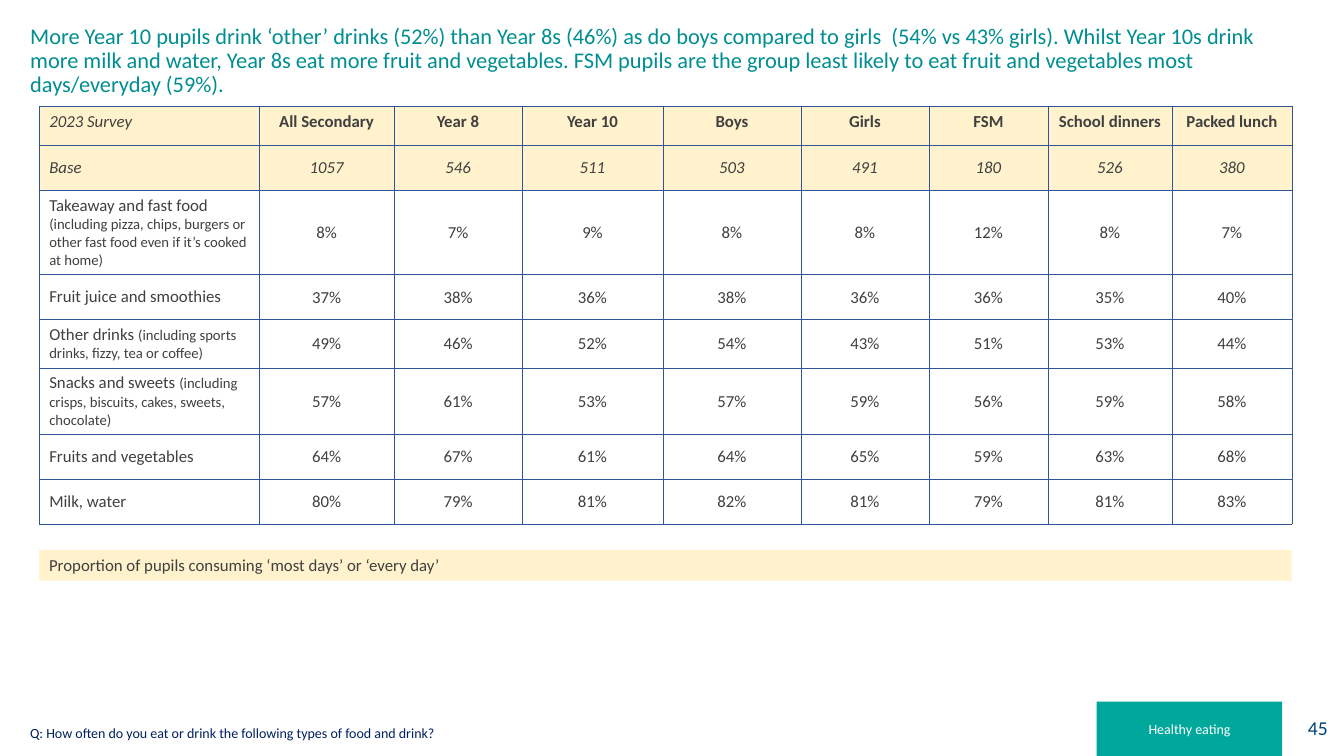
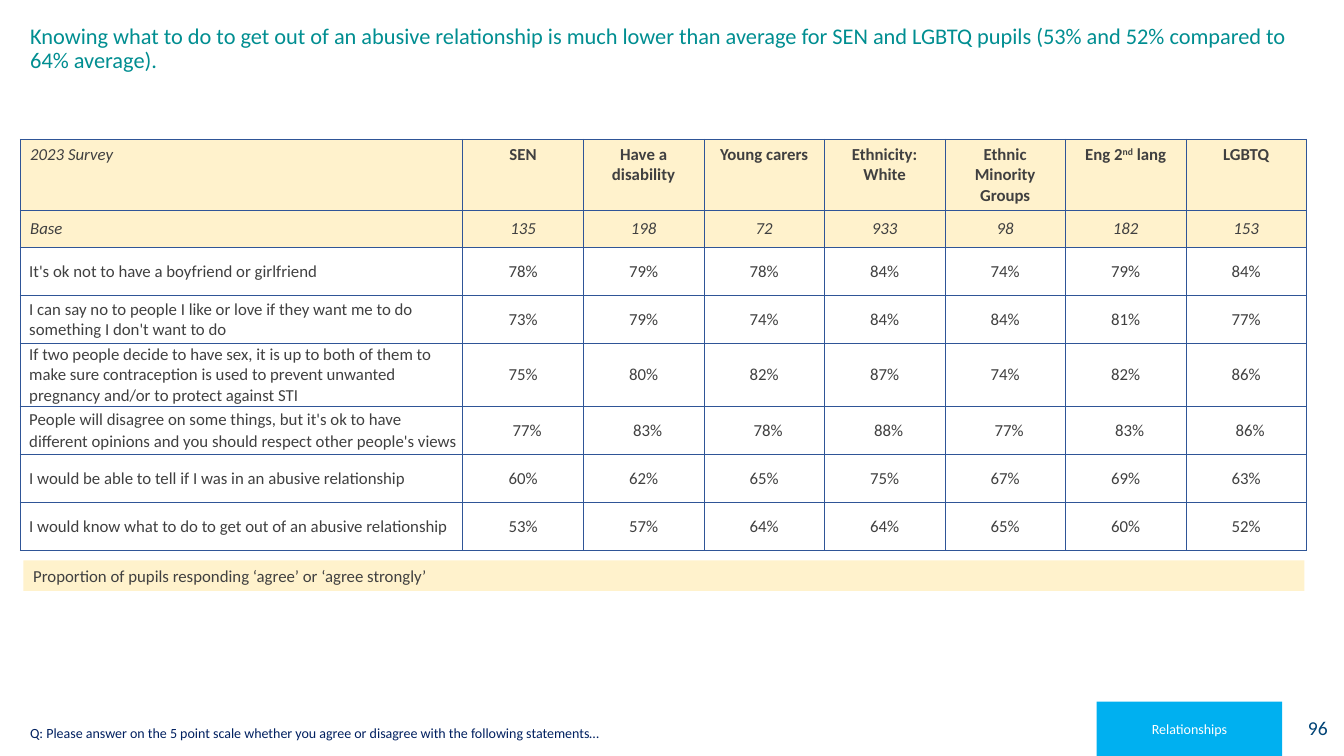
from lxml.etree import SubElement
from pptx import Presentation
from pptx.dml.color import RGBColor
from pptx.enum.shapes import MSO_SHAPE
from pptx.enum.text import MSO_ANCHOR, MSO_AUTO_SIZE, PP_ALIGN
from pptx.oxml.ns import qn
from pptx.util import Pt

COLORS = {
    "title": "008E91",
    "body": "404040",
    "question": "002060",
    "page": "004376",
    "border": "2F5597",
    "cream": "FFF2CC",
    "white": "FFFFFF",
    "healthy": "00A79B",
    "relationships": "00B0F0",
}
CENTER = {"alignment": PP_ALIGN.CENTER}
LEFT = {"alignment": PP_ALIGN.LEFT}
RIGHT = {"alignment": PP_ALIGN.RIGHT}
DETAIL = {"size": Pt(10.5)}
TIGHT = {"margin_left": Pt(0.7), "margin_right": Pt(0.7),
         "margin_top": Pt(0.7), "margin_bottom": Pt(0)}
INDENTED = {**TIGHT, "margin_left": Pt(6.5)}


def apply(target, formats):
    for name, value in formats.items():
        setattr(target, name, value)


class SurveyDeck:
    def __init__(self):
        self.deck = Presentation()
        apply(self.deck, {"slide_width": Pt(960), "slide_height": Pt(540)})
        self.slide = None

    def box(self, left, top, width, height):
        return Pt(left), Pt(top), Pt(width), Pt(height)

    def put_text(self, frame, content, color, size, paragraph_format=LEFT, **font_format):
        runs = [(content, {})] if isinstance(content, str) else content
        paragraph = frame.paragraphs[0]
        apply(paragraph, paragraph_format)
        for text, extra in runs:
            run = paragraph.add_run()
            run.text = text
            formats = {"name": "Calibri", "size": Pt(size), **font_format, **extra}
            baseline = formats.pop("baseline", None)
            apply(run.font, formats)
            run.font.color.rgb = RGBColor.from_string(COLORS[color])
            if baseline:
                run._r.get_or_add_rPr().set("baseline", baseline)

    def start(self, title, height):
        self.slide = self.deck.slides.add_slide(self.deck.slide_layouts[5])
        heading = self.slide.shapes.title
        left, top, width, height = self.box(14.4, 14.4, 919.4, height)
        apply(heading, {"left": left, "top": top, "width": width, "height": height})
        apply(heading.text_frame, {"word_wrap": True, "auto_size": MSO_AUTO_SIZE.NONE,
                                   "vertical_anchor": MSO_ANCHOR.TOP})
        self.put_text(heading.text_frame, title, "title", 16,
                      {**LEFT, "line_spacing": 0.9})

    def band(self, place, fill, text, color, size, paragraph_format=LEFT,
             anchor=MSO_ANCHOR.MIDDLE):
        band = self.slide.shapes.add_shape(MSO_SHAPE.RECTANGLE, *self.box(*place))
        band.shadow.inherit = False
        band.fill.solid()
        band.fill.fore_color.rgb = RGBColor.from_string(COLORS[fill])
        band.line.fill.background()
        apply(band.text_frame, {"word_wrap": True, "vertical_anchor": anchor})
        self.put_text(band.text_frame, text, color, size, paragraph_format)

    def note(self, left, top, width, text):
        self.band((left, top, width, 21.8), "cream", text, "body", 12,
                  anchor=MSO_ANCHOR.TOP)

    def footer(self, question, topic, topic_fill, page):
        asked = self.slide.shapes.add_textbox(*self.box(14.4, 513.4, 740, 19.4))
        apply(asked.text_frame, {"word_wrap": True, "vertical_anchor": MSO_ANCHOR.BOTTOM})
        self.put_text(asked.text_frame, question, "question", 10)
        self.band((913, 500.4, 42.5, 38.9), "white", page, "page", 14, RIGHT)
        self.band((783.4, 501.1, 132.5, 38.9), topic_fill, topic, "white", 10, CENTER)

    def borders(self, cell):
        properties = cell._tc.get_or_add_tcPr()
        for side in ("lnL", "lnR", "lnT", "lnB"):
            line = SubElement(properties, qn(f"a:{side}"), w=str(Pt(0.5)))
            fill = SubElement(line, qn("a:solidFill"))
            SubElement(fill, qn("a:srgbClr"), val=COLORS["border"])

    def survey(self, left, top, widths, heights, headers, bases, answers,
               label_margins, loose_row=None):
        rows = [["2023 Survey", *headers], ["Base", *bases]]
        rows += [[label, *(f"{share}%" for share in shares)] for label, shares in answers]
        frame = self.slide.shapes.add_table(
            len(rows), len(widths), *self.box(left, top, sum(widths), sum(heights)))
        table = frame.table
        apply(table, {"first_row": False, "horz_banding": False})
        for column, width in zip(table.columns, widths):
            column.width = Pt(width)
        for row, height in zip(table.rows, heights):
            row.height = Pt(height)
        for r, row in enumerate(rows):
            for c, content in enumerate(row):
                cell = table.cell(r, c)
                self.borders(cell)
                if r < 2:
                    cell.fill.solid()
                    cell.fill.fore_color.rgb = RGBColor.from_string(COLORS["cream"])
                else:
                    cell.fill.background()
                    value_margins = INDENTED if r == loose_row else TIGHT
                    apply(cell, value_margins if c else label_margins)
                cell.vertical_anchor = MSO_ANCHOR.MIDDLE if r else MSO_ANCHOR.TOP
                layout = dict(CENTER if c else LEFT)
                if r == loose_row:
                    layout["line_spacing"] = 1.07
                self.put_text(cell.text_frame, content, "body", 12, layout,
                              bold=r == 0 and c > 0,
                              italic=r == 1 or (r == 0 and c == 0))


def healthy_eating(survey):
    survey.start("More Year 10 pupils drink ‘other’ drinks (52%) than Year 8s (46%) as do boys "
                 "compared to girls  (54% vs 43% girls). Whilst Year 10s drink more milk and "
                 "water, Year 8s eat more fruit and vegetables. FSM pupils are the group least "
                 "likely to eat fruit and vegetables most days/everyday (59%).", 61.2)
    survey.survey(
        28, 75.8,
        [157.1, 96.4, 91.4, 100.7, 98.6, 91.4, 85, 88.6, 85.7],
        [28] + [32.2] * 7,
        ["All Secondary", "Year 8", "Year 10", "Boys", "Girls", "FSM",
         "School dinners", "Packed lunch"],
        ["1057", "546", "511", "503", "491", "180", "526", "380"],
        [
            ([("Takeaway and fast food ", {}),
              ("(including pizza, chips, burgers or other fast food even if it’s "
               "cooked at home)", DETAIL)], [8, 7, 9, 8, 8, 12, 8, 7]),
            ("Fruit juice and smoothies", [37, 38, 36, 38, 36, 36, 35, 40]),
            ([("Other drinks ", {}),
              ("(including sports drinks, fizzy, tea or coffee)", DETAIL)],
             [49, 46, 52, 54, 43, 51, 53, 44]),
            ([("Snacks and sweets ", {}),
              ("(including crisps, biscuits, cakes, sweets, chocolate)", DETAIL)],
             [57, 61, 53, 57, 59, 56, 59, 58]),
            ("Fruits and vegetables", [64, 67, 61, 64, 65, 59, 63, 68]),
            ("Milk, water", [80, 79, 81, 82, 81, 79, 81, 83]),
        ],
        {})
    survey.note(28, 392.9, 894.6, "Proportion of pupils consuming ‘most days’ or ‘every day’")
    survey.footer("Q: How often do you eat or drink the following types of food and drink?",
                  "Healthy eating", "healthy", "45")


def relationships(survey):
    survey.start("Knowing what to do to get out of an abusive relationship is much lower than "
                 "average for SEN and LGBTQ pupils (53% and 52% compared to 64% average).", 70.6)
    survey.survey(
        14.4, 99.4,
        [316.2] + [86.1] * 7,
        [33.8, 26.2] + [34.3] * 6,
        ["SEN", "Have a disability", "Young carers", "Ethnicity: White",
         "Ethnic Minority Groups",
         [("Eng 2", {}), ("nd", {"baseline": "30000"}), (" lang", {})], "LGBTQ"],
        ["135", "198", "72", "933", "98", "182", "153"],
        [
            ("It's ok not to have a boyfriend or girlfriend", [78, 79, 78, 84, 74, 79, 84]),
            ("I can say no to people I like or love if they want me to do something "
             "I don't want to do", [73, 79, 74, 84, 84, 81, 77]),
            ("If two people decide to have sex, it is up to both of them to make sure "
             "contraception is used to prevent unwanted pregnancy and/or to protect "
             "against STI", [75, 80, 82, 87, 74, 82, 86]),
            ("People will disagree on some things, but it's ok to have different opinions "
             "and you should respect other people's views", [77, 83, 78, 88, 77, 83, 86]),
            ("I would be able to tell if I was in an abusive relationship",
             [60, 62, 65, 75, 67, 69, 63]),
            ("I would know what to do to get out of an abusive relationship",
             [53, 57, 64, 64, 65, 60, 52]),
        ],
        INDENTED, loose_row=5)
    survey.note(16.6, 400.2, 915.1, "Proportion of pupils responding ‘agree’ or ‘agree strongly’")
    survey.footer("Q: Please answer on the 5 point scale whether you agree or disagree with "
                  "the following statements…", "Relationships", "relationships", "96")


def main():
    survey = SurveyDeck()
    healthy_eating(survey)
    relationships(survey)
    survey.deck.save("out.pptx")


if __name__ == "__main__":
    main()
